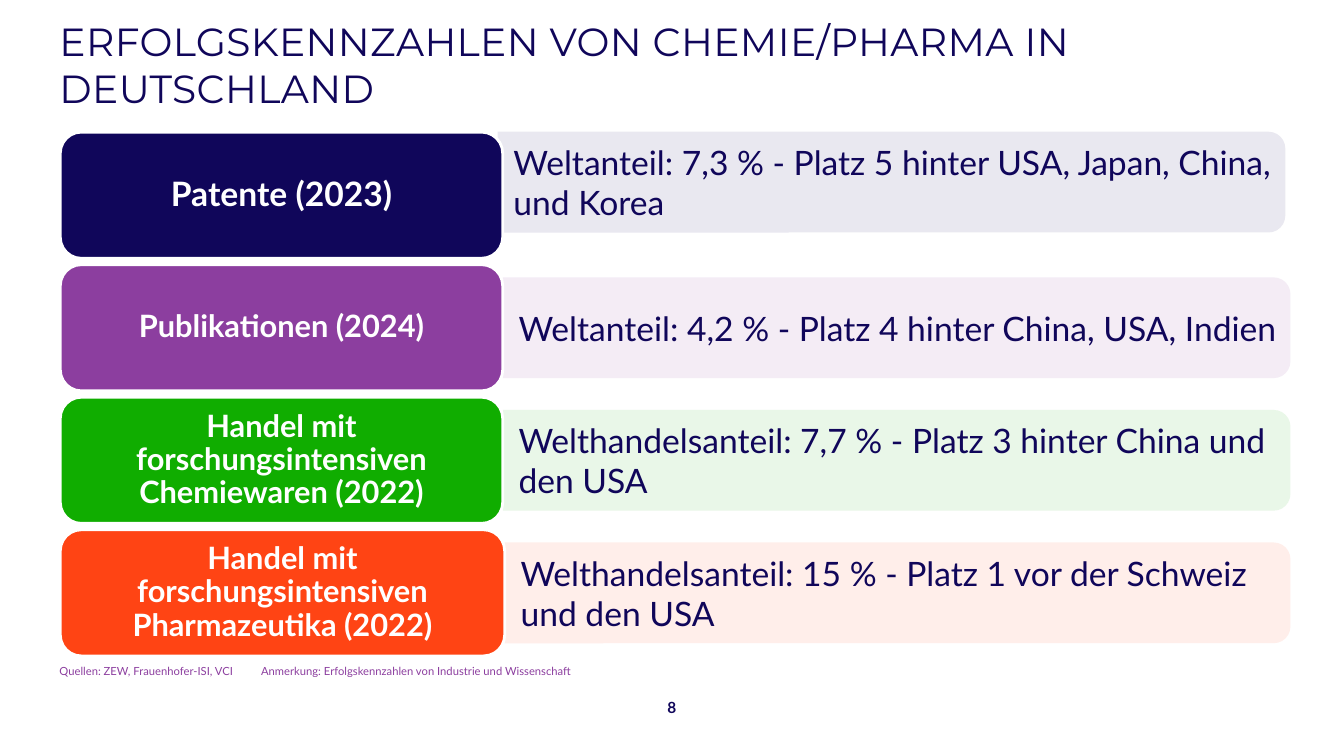
from dataclasses import dataclass

from lxml.etree import SubElement
from pptx import Presentation
from pptx.dml.color import RGBColor
from pptx.enum.shapes import MSO_SHAPE
from pptx.enum.text import MSO_ANCHOR, PP_ALIGN
from pptx.oxml.ns import qn
from pptx.shapes.autoshape import Shape
from pptx.slide import Slide
from pptx.util import Cm, Pt

NAVY = RGBColor(0x10, 0x06, 0x5A)
PURPLE = RGBColor(0x8C, 0x3E, 0x9F)
GREEN = RGBColor(0x10, 0xAD, 0x00)
ORANGE = RGBColor(0xFF, 0x44, 0x14)
PALE_NAVY = RGBColor(0xE7, 0xE6, 0xEF)
PALE_PURPLE = RGBColor(0xF3, 0xEB, 0xF5)
PALE_GREEN = RGBColor(0xE7, 0xF7, 0xE6)
PALE_ORANGE = RGBColor(0xFF, 0xED, 0xE8)
WHITE = RGBColor(0xFF, 0xFF, 0xFF)

CARD_LEFT, CARD_TOP, CARD_HEIGHT, ROW_PITCH = 1.52, 3.33, 3.18, 3.34
BAR_RIGHT, BAR_HEIGHT = 32.52, 2.54


@dataclass(frozen=True)
class Indicator:
    label: str
    fact: str
    card_color: RGBColor
    bar_color: RGBColor
    label_size: float = 22
    card_width: float = 11.15
    bar_shift: tuple[float, float] = (0, 0)


INDICATORS = [
    Indicator("Patente (2023)",
              "Weltanteil: 7,3 % - Platz 5 hinter USA, Japan, China, und Korea",
              NAVY, PALE_NAVY, label_size=24, bar_shift=(-0.13, -0.33)),
    Indicator("Publikationen (2024)",
              "Weltanteil: 4,2 % - Platz 4 hinter China, USA, Indien",
              PURPLE, PALE_PURPLE),
    Indicator("Handel mit forschungsintensiven Chemiewaren (2022)",
              "Welthandelsanteil: 7,7 % - Platz 3 hinter China und den USA",
              GREEN, PALE_GREEN),
    Indicator("Handel mit forschungsintensiven Pharmazeutika (2022)",
              "Welthandelsanteil: 15 % - Platz 1 vor der Schweiz und den USA",
              ORANGE, PALE_ORANGE, card_width=11.2),
]


def write_text(shape: Shape, text: str, size: float, color: RGBColor, *,
               font: str = "Lato", bold: bool = False, align: PP_ALIGN = PP_ALIGN.LEFT,
               anchor: MSO_ANCHOR = MSO_ANCHOR.MIDDLE, line_spacing: float = 1.0,
               margins: tuple[float, float, float, float] = (0, 0, 0, 0),
               letter_spacing: float = 0) -> None:
    """Write one run; margins are left, top, right, bottom in centimetres."""
    frame = shape.text_frame
    frame.word_wrap = True
    frame.vertical_anchor = anchor
    (frame.margin_left, frame.margin_top,
     frame.margin_right, frame.margin_bottom) = map(Cm, margins)
    paragraph = frame.paragraphs[0]
    paragraph.alignment = align
    paragraph.line_spacing = line_spacing
    run = paragraph.add_run()
    run.text = text
    run.font.name = font
    run.font.size = Pt(size)
    run.font.bold = bold
    run.font.color.rgb = color
    if letter_spacing:
        run._r.get_or_add_rPr().set("spc", str(round(letter_spacing * 100)))


def add_text_box(slide: Slide, left: float, top: float, width: float, height: float) -> Shape:
    return slide.shapes.add_textbox(Cm(left), Cm(top), Cm(width), Cm(height))


def add_filled_shape(slide: Slide, kind: MSO_SHAPE, left: float, top: float,
                     width: float, height: float, color: RGBColor) -> Shape:
    shape = slide.shapes.add_shape(kind, Cm(left), Cm(top), Cm(width), Cm(height))
    shape.shadow.inherit = False
    shape.fill.solid()
    shape.fill.fore_color.rgb = color
    shape.line.fill.background()
    return shape


def add_indicator(slide: Slide, indicator: Indicator, card_top: float) -> None:
    """Draw the pale fact bar, its text and the label card over its left edge."""
    shift_x, shift_y = indicator.bar_shift
    card_right = CARD_LEFT + indicator.card_width
    bar_left = card_right + shift_x
    bar_width = BAR_RIGHT - card_right
    bar_top = card_top + (CARD_HEIGHT - BAR_HEIGHT) / 2 + shift_y

    # The bar stands upright before its quarter turn about the centre.
    overhang = (bar_width - BAR_HEIGHT) / 2
    bar = add_filled_shape(slide, MSO_SHAPE.ROUND_2_SAME_RECTANGLE, bar_left + overhang,
                           bar_top - overhang, BAR_HEIGHT, bar_width, indicator.bar_color)
    bar.rotation = 90
    color_element = bar.fill._xPr.find(qn("a:solidFill")).find(qn("a:srgbClr"))
    SubElement(color_element, qn("a:alpha"), val="90000")

    fact_box = add_text_box(slide, bar_left, bar_top, bar_width, BAR_HEIGHT)
    write_text(fact_box, indicator.fact, 24, NAVY, margins=(0.4, 0.1, 0.2, 0.1))

    card = add_filled_shape(slide, MSO_SHAPE.ROUNDED_RECTANGLE, CARD_LEFT, card_top,
                            indicator.card_width, CARD_HEIGHT, indicator.card_color)
    card.line.color.rgb = WHITE
    card.line.width = Pt(2)
    write_text(card, indicator.label, indicator.label_size, WHITE, bold=True,
               align=PP_ALIGN.CENTER, line_spacing=0.9, margins=(0.23, 0.12, 0.23, 0.12))


def main() -> None:
    presentation = Presentation()
    presentation.slide_width = Cm(33.87)
    presentation.slide_height = Cm(19.05)
    slide = presentation.slides.add_slide(presentation.slide_layouts[6])

    title = add_text_box(slide, 1.5, 0.38, 31.3, 2.49)
    write_text(title, "ERFOLGSKENNZAHLEN VON CHEMIE/PHARMA IN DEUTSCHLAND", 28, NAVY,
               font="Montserrat", margins=(0, 0.1, 0, 0.1), letter_spacing=0.3)

    for index, indicator in enumerate(INDICATORS):
        add_indicator(slide, indicator, CARD_TOP + index * ROW_PITCH)

    sources = add_text_box(slide, 1.5, 16.74, 16.76, 0.46)
    write_text(sources, "Quellen: ZEW, Frauenhofer-ISI, VCI\tAnmerkung: "
               "Erfolgskennzahlen von Industrie und Wissenschaft", 8, PURPLE,
               anchor=MSO_ANCHOR.TOP)

    page_number = add_text_box(slide, 16.18, 17.48, 1.5, 0.71)
    write_text(page_number, "8", 11, NAVY, bold=True, align=PP_ALIGN.CENTER)

    presentation.save("out.pptx")


if __name__ == "__main__":
    main()
